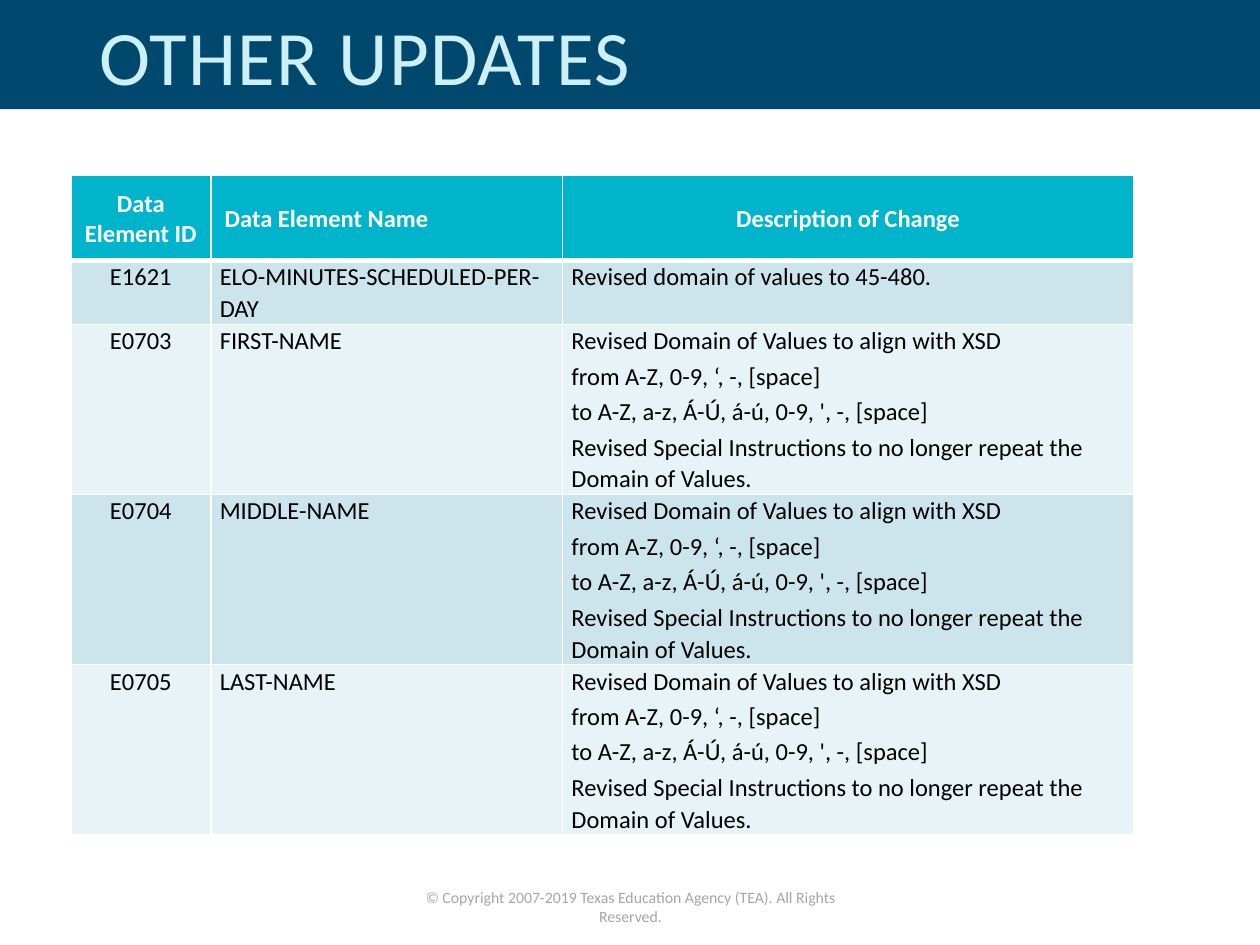
"""Build the slide that lists other updates to data elements."""
from lxml.etree import SubElement
from pptx import Presentation
from pptx.dml.color import RGBColor
from pptx.enum.shapes import MSO_SHAPE
from pptx.enum.text import MSO_ANCHOR, PP_ALIGN
from pptx.oxml.ns import qn
from pptx.util import Cm, Pt

NAVY = RGBColor(0x00, 0x48, 0x6E)
PALE_CYAN = RGBColor(0xCC, 0xF0, 0xF5)
TEAL = RGBColor(0x00, 0xB5, 0xCB)
DARK_BAND = RGBColor(0xCC, 0xE5, 0xEC)
LIGHT_BAND = RGBColor(0xE7, 0xF3, 0xF6)
GRAY = RGBColor(0xA6, 0xA6, 0xA6)
WHITE = RGBColor(0xFF, 0xFF, 0xFF)
BLACK = RGBColor(0x00, 0x00, 0x00)

NAME_CHANGE = "\n".join([
    "Revised Domain of Values to align with XSD",
    "from A-Z, 0-9, ‘, -, [space]",
    "to A-Z, a-z, Á-Ú, á-ú, 0-9, ', -, [space]",
    "Revised Special Instructions to no longer repeat the Domain of Values.",
])
ROWS = [
    ("Data\nElement ID", "Data Element Name", "Description of Change"),
    ("E1621", "ELO-MINUTES-SCHEDULED-PER-DAY", "Revised domain of values to 45-480."),
    ("E0703", "FIRST-NAME", NAME_CHANGE),
    ("E0704", "MIDDLE-NAME", NAME_CHANGE),
    ("E0705", "LAST-NAME", NAME_CHANGE),
]
COLUMN_WIDTHS = [2.82, 7.09, 11.51]
ROW_HEIGHTS = [1.71, 1.29, 3.43, 3.43, 3.43]


def format_runs(paragraph, size, color, bold=False):
    for run in paragraph.runs:
        run.font.name = "Calibri"
        run.font.size = Pt(size)
        run.font.bold = bold
        run.font.color.rgb = color


def add_borders(cell, bottom_width):
    properties = cell._tc.get_or_add_tcPr()
    for side, width in (("L", 1), ("R", 1), ("T", 1), ("B", bottom_width)):
        line = SubElement(properties, qn(f"a:ln{side}"), w=str(Pt(width)))
        fill = SubElement(line, qn("a:solidFill"))
        SubElement(fill, qn("a:srgbClr"), val=str(WHITE))


presentation = Presentation()
presentation.slide_width = Cm(25.4)
presentation.slide_height = Cm(19.05)
slide = presentation.slides.add_slide(presentation.slide_layouts[6])

banner = slide.shapes.add_shape(MSO_SHAPE.RECTANGLE, 0, 0, Cm(25.4), Cm(2.2))
banner.shadow.inherit = False
banner.fill.solid()
banner.fill.fore_color.rgb = NAVY
banner.line.fill.background()

footer = slide.shapes.add_textbox(Cm(7.72), Cm(17.78), Cm(9.98), Cm(0.64))
footer.text_frame.word_wrap = True
footer.text_frame.text = "© Copyright 2007-2019 Texas Education Agency (TEA). All Rights Reserved."
paragraph = footer.text_frame.paragraphs[0]
paragraph.alignment = PP_ALIGN.CENTER
format_runs(paragraph, 9, GRAY)

title = slide.shapes.add_textbox(Cm(1.75), Cm(0.13), Cm(20.32), Cm(2.2))
title.text_frame.word_wrap = True
title.text_frame.vertical_anchor = MSO_ANCHOR.MIDDLE
title.text_frame.text = "OTHER UPDATES"
paragraph = title.text_frame.paragraphs[0]
paragraph.line_spacing = 0.9
format_runs(paragraph, 44, PALE_CYAN)
paragraph.runs[0]._r.get_or_add_rPr().set("spc", "80")

table = slide.shapes.add_table(
    len(ROWS), len(COLUMN_WIDTHS), Cm(1.43), Cm(3.54),
    Cm(sum(COLUMN_WIDTHS)), Cm(sum(ROW_HEIGHTS)),
).table
for column, width in zip(table.columns, COLUMN_WIDTHS):
    column.width = Cm(width)
for row, height in zip(table.rows, ROW_HEIGHTS):
    row.height = Cm(height)

for row_index, texts in enumerate(ROWS):
    is_header = row_index == 0
    band = DARK_BAND if row_index % 2 else LIGHT_BAND
    for column_index, text in enumerate(texts):
        cell = table.cell(row_index, column_index)
        add_borders(cell, 3 if is_header else 1)
        cell.fill.solid()
        cell.fill.fore_color.rgb = TEAL if is_header else band
        cell.margin_left = cell.margin_right = Cm(0.03 if is_header else 0.18)
        cell.margin_top = Cm(0.03 if is_header else 0)
        cell.margin_bottom = 0
        cell.vertical_anchor = MSO_ANCHOR.MIDDLE if is_header else MSO_ANCHOR.TOP
        cell.text_frame.text = text
        centered = column_index == 0 or (is_header and column_index == 2)
        for paragraph_index, paragraph in enumerate(cell.text_frame.paragraphs):
            paragraph.alignment = PP_ALIGN.CENTER if centered else PP_ALIGN.LEFT
            if not is_header:
                paragraph.line_spacing = 1.07
                paragraph.space_before = Pt(2 if paragraph_index else 0)
            elif not centered:
                paragraph._p.get_or_add_pPr().set("marL", str(Cm(0.25)))
            format_runs(paragraph, 14, WHITE if is_header else BLACK, is_header)

presentation.save("out.pptx")
